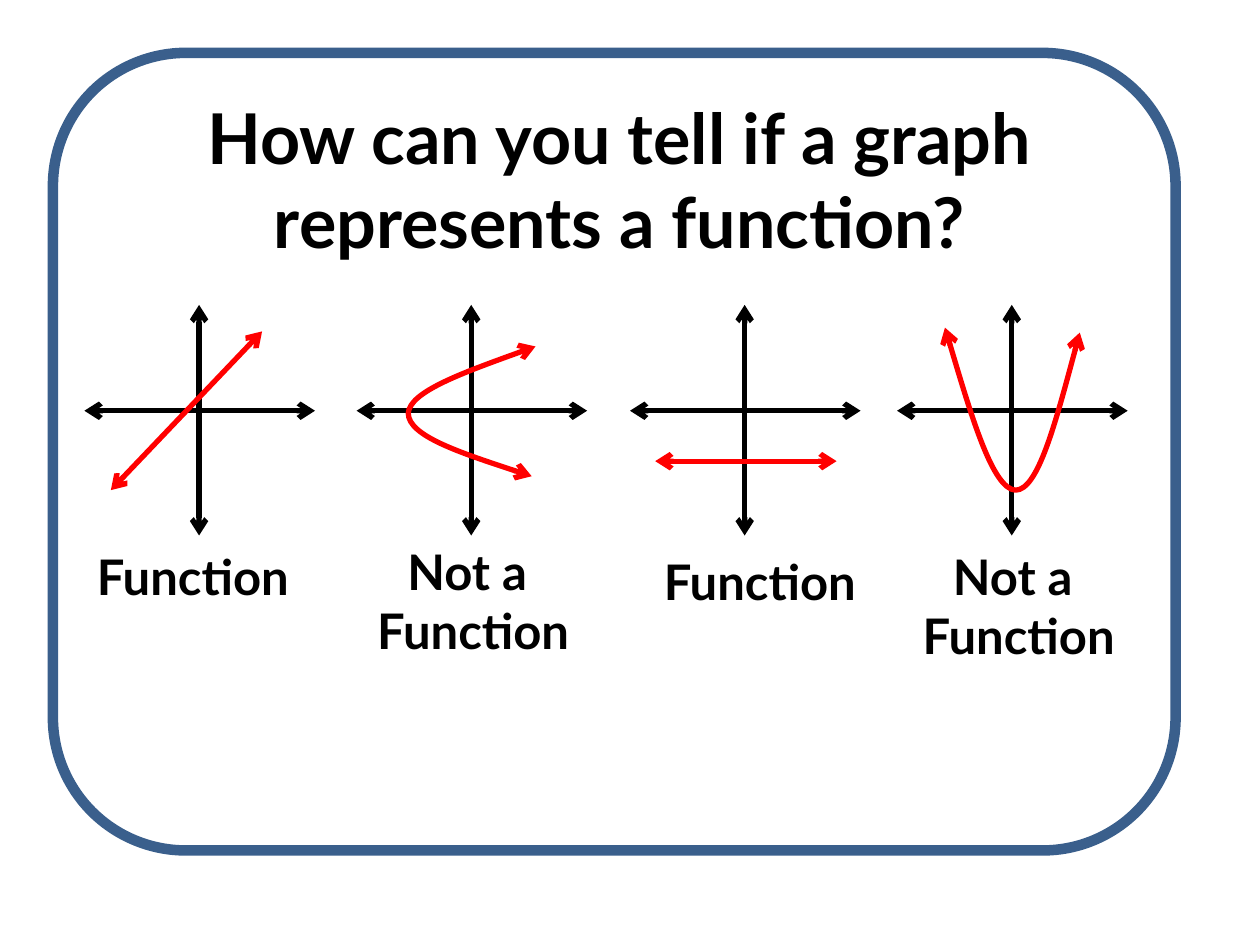
from pptx import Presentation
from pptx.dml.color import RGBColor
from pptx.enum.shapes import MSO_CONNECTOR as CONNECTOR, MSO_SHAPE as SHAPE
from pptx.enum.text import MSO_ANCHOR as ANCHOR, PP_ALIGN as ALIGN
from pptx.oxml.ns import qn
from pptx.util import Pt
from lxml.etree import SubElement

PX = 9144
FONT = "Lato"
BLACK, RED, BLUE, WHITE = "000000", "FF0000", "3A5F8C", "FFFFFF"
GRAPH_SIZE = 183
AXIS_X, AXIS_Y = 91, 84


def emu(*lengths):
    return [length * PX for length in lengths]


def color(hex_string):
    return RGBColor.from_string(hex_string)


def add_text(slide, box, text, size, align, anchor=ANCHOR.TOP):
    frame = slide.shapes.add_textbox(*emu(*box)).text_frame
    frame.word_wrap = True
    frame.vertical_anchor = anchor
    frame.text = text
    for paragraph in frame.paragraphs:
        paragraph.alignment = align
        for run in paragraph.runs:
            run.font.name = FONT
            run.font.size = Pt(size)
            run.font.bold = True
            run.font.color.rgb = color(BLACK)


def style_arrow(stroke, hex_string):
    stroke.line.color.rgb = color(hex_string)
    stroke.line.width = Pt(3)
    outline = stroke.line._get_or_add_ln()
    for end in ("a:headEnd", "a:tailEnd"):
        SubElement(outline, qn(end), type="arrow")


def add_arrow(shapes, start, end, hex_string):
    arrow = shapes.add_connector(CONNECTOR.STRAIGHT, *emu(*start, *end))
    style_arrow(arrow, hex_string)
    SubElement(arrow._element.spPr, qn("a:effectLst"))


def add_curve(shapes, points, hex_string):
    builder = shapes.build_freeform(*points[0], scale=PX)
    builder.add_line_segments(points[1:], close=False)
    curve = builder.convert_to_shape()
    curve.shadow.inherit = False
    curve.fill.background()
    style_arrow(curve, hex_string)
    segments = curve._element.xpath(".//a:lnTo")
    for first in range(0, len(segments), 3):
        bezier = SubElement(segments[first].getparent(), qn("a:cubicBezTo"))
        for segment in segments[first:first + 3]:
            bezier.append(segment[0])
            segment.getparent().remove(segment)


def add_frame(slide, box):
    frame = slide.shapes.add_shape(SHAPE.ROUNDED_RECTANGLE, *emu(*box))
    frame.shadow.inherit = False
    frame.fill.solid()
    frame.fill.fore_color.rgb = color(WHITE)
    frame.line.color.rgb = color(BLUE)
    frame.line.width = Pt(6)


def add_graph(slide, left, top, points, verdict, verdict_offset):
    axes = slide.shapes.add_group_shape().shapes
    x, y = left + AXIS_X, top + AXIS_Y
    add_arrow(axes, (x, top), (x, top + GRAPH_SIZE), BLACK)
    add_arrow(axes, (left, y), (left + GRAPH_SIZE, y), BLACK)

    placed = [(left + dx, top + dy) for dx, dy in points]
    if len(placed) == 2:
        add_arrow(slide.shapes, *placed, RED)
    else:
        add_curve(slide.shapes, placed, RED)

    dx, dy = verdict_offset
    two_lines = "\n" in verdict
    box = (left + dx, top + dy, 217, 104 if two_lines else 57)
    add_text(slide, box, verdict, 28, ALIGN.CENTER if two_lines else ALIGN.LEFT)


def main():
    deck = Presentation()
    deck.slide_width, deck.slide_height = emu(1000, 750)
    slide = deck.slides.add_slide(deck.slide_layouts[6])

    add_frame(slide, (42, 42, 891, 633))
    add_text(slide, (50, 75, 883, 133),
             "How can you tell if a graph represents a function?",
             40, ALIGN.CENTER, ANCHOR.MIDDLE)

    rising_line = [(21, 147), (141, 21)]
    sideways_parabola = [(142, 33), (92, 51), (42, 69), (41, 86),
                         (41, 104), (90, 120), (139, 136)]
    level_line = [(20, 124), (164, 124)]
    upright_parabola = [(38, 18), (57, 82), (76, 146), (94, 147),
                        (112, 147), (128, 85), (145, 22)]
    yes, no = "Function", "Not a \nFunction"
    graphs = [
        (67, rising_line, yes, (0, 187)),
        (283, sideways_parabola, no, (-16, 183)),
        (500, level_line, yes, (17, 191)),
        (712, upright_parabola, no, (-12, 187)),
    ]
    for left, points, verdict, verdict_offset in graphs:
        add_graph(slide, left, 242, points, verdict, verdict_offset)

    deck.save("out.pptx")


if __name__ == "__main__":
    main()
